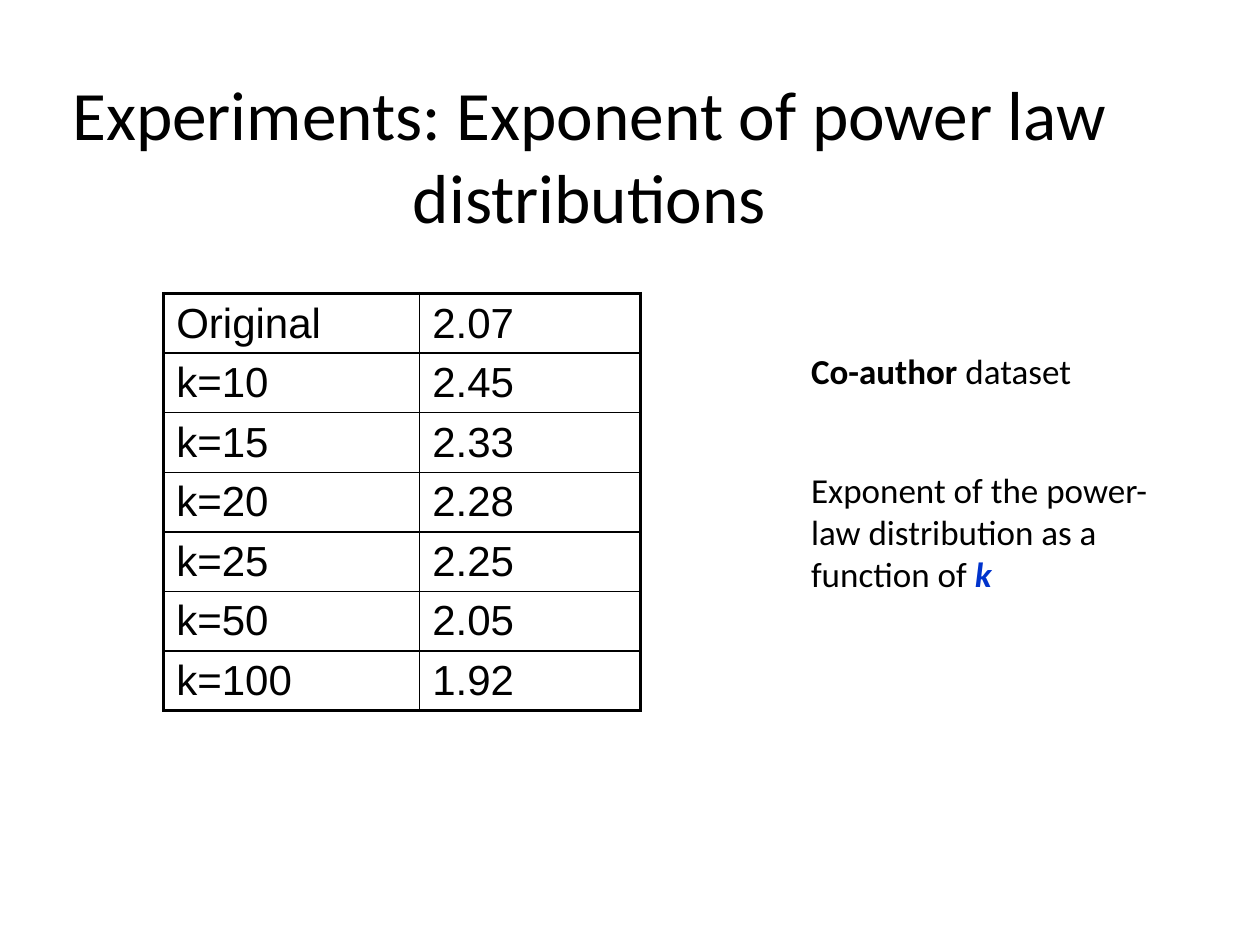
from lxml import etree
from pptx import Presentation
from pptx.dml.color import RGBColor
from pptx.enum import text
from pptx.oxml.ns import qn
from pptx.util import Cm, Pt

BLACK = "000000"
BLUE = "0033CC"
THICK, THIN = 2.25, 1

EXPONENTS = [
    ("Original", "2.07"),
    ("k=10", "2.45"),
    ("k=15", "2.33"),
    ("k=20", "2.28"),
    ("k=25", "2.25"),
    ("k=50", "2.05"),
    ("k=100", "1.92"),
]


def color(value):
    return RGBColor.from_string(value)


def add_run(paragraph, words, size, font="Calibri", fill=BLACK, bold=False, italic=False):
    run = paragraph.add_run()
    run.text = words
    run.font.name = font
    run.font.size = Pt(size)
    run.font.bold = bold
    run.font.italic = italic
    run.font.color.rgb = color(fill)


def set_borders(cell, widths):
    """Draw the left, right, top and bottom borders of a cell, ahead of its fill."""
    properties = cell._tc.get_or_add_tcPr()
    for index, (side, width) in enumerate(widths.items()):
        line = etree.Element(qn(f"a:{side}"), w=str(Pt(width)))
        fill = etree.SubElement(line, qn("a:solidFill"))
        etree.SubElement(fill, qn("a:srgbClr"), val=BLACK)
        properties.insert(index, line)


def add_title(slide, left, top, width, height):
    title = slide.shapes.title
    title.left, title.top, title.width, title.height = left, top, width, height
    frame = title.text_frame
    frame.word_wrap = True
    frame.auto_size = text.MSO_AUTO_SIZE.NONE
    frame.vertical_anchor = text.MSO_ANCHOR.MIDDLE
    paragraph = frame.paragraphs[0]
    paragraph.alignment = text.PP_ALIGN.CENTER
    add_run(paragraph, "Experiments: Exponent of power law distributions", 39.6)


def add_exponent_table(slide, left, top, column_widths, row_height):
    last_row, last_column = len(EXPONENTS) - 1, len(column_widths) - 1
    table = slide.shapes.add_table(
        len(EXPONENTS), len(column_widths), left, top,
        sum(column_widths), row_height * len(EXPONENTS),
    ).table
    table.first_row = table.horz_banding = False
    for column, width in zip(table.columns, column_widths):
        column.width = width

    for row, values in enumerate(EXPONENTS):
        table.rows[row].height = row_height
        for column, value in enumerate(values):
            cell = table.cell(row, column)
            cell.fill.background()
            cell.margin_top = cell.margin_bottom = Cm(0.1)
            cell.vertical_anchor = text.MSO_ANCHOR.MIDDLE
            add_run(cell.text_frame.paragraphs[0], value, 24, font="Arial")
            # Thick outer frame, thin inner grid
            set_borders(cell, {
                "lnL": THICK if column == 0 else THIN,
                "lnR": THICK if column == last_column else THIN,
                "lnT": THICK if row == 0 else THIN,
                "lnB": THICK if row == last_row else THIN,
            })


def add_dataset_notes(slide, left, top, width, height):
    frame = slide.shapes.add_textbox(left, top, width, height).text_frame
    frame.word_wrap = True

    dataset = frame.paragraphs[0]
    add_run(dataset, "Co-author", 20, bold=True)
    add_run(dataset, " dataset", 20)

    explanation = frame.add_paragraph()
    explanation.space_before = Pt(44)
    add_run(explanation, "Exponent of the power-law distribution as a function of ", 20)
    add_run(explanation, "k", 20, fill=BLUE, bold=True, italic=True)


def main():
    presentation = Presentation()
    presentation.slide_width, presentation.slide_height = Cm(25.4), Cm(19.05)
    slide = presentation.slides.add_slide(presentation.slide_layouts.get_by_name("Title Only"))

    add_title(slide, Cm(0.43), Cm(2.41), Cm(22.91), Cm(1.4))
    add_exponent_table(slide, Cm(3.3), Cm(5.92), [Cm(5.16), Cm(4.45)], Cm(1.2))
    add_dataset_notes(slide, Cm(16.1), Cm(6.93), Cm(7.6), Cm(10.03))

    presentation.save("out.pptx")


if __name__ == "__main__":
    main()
